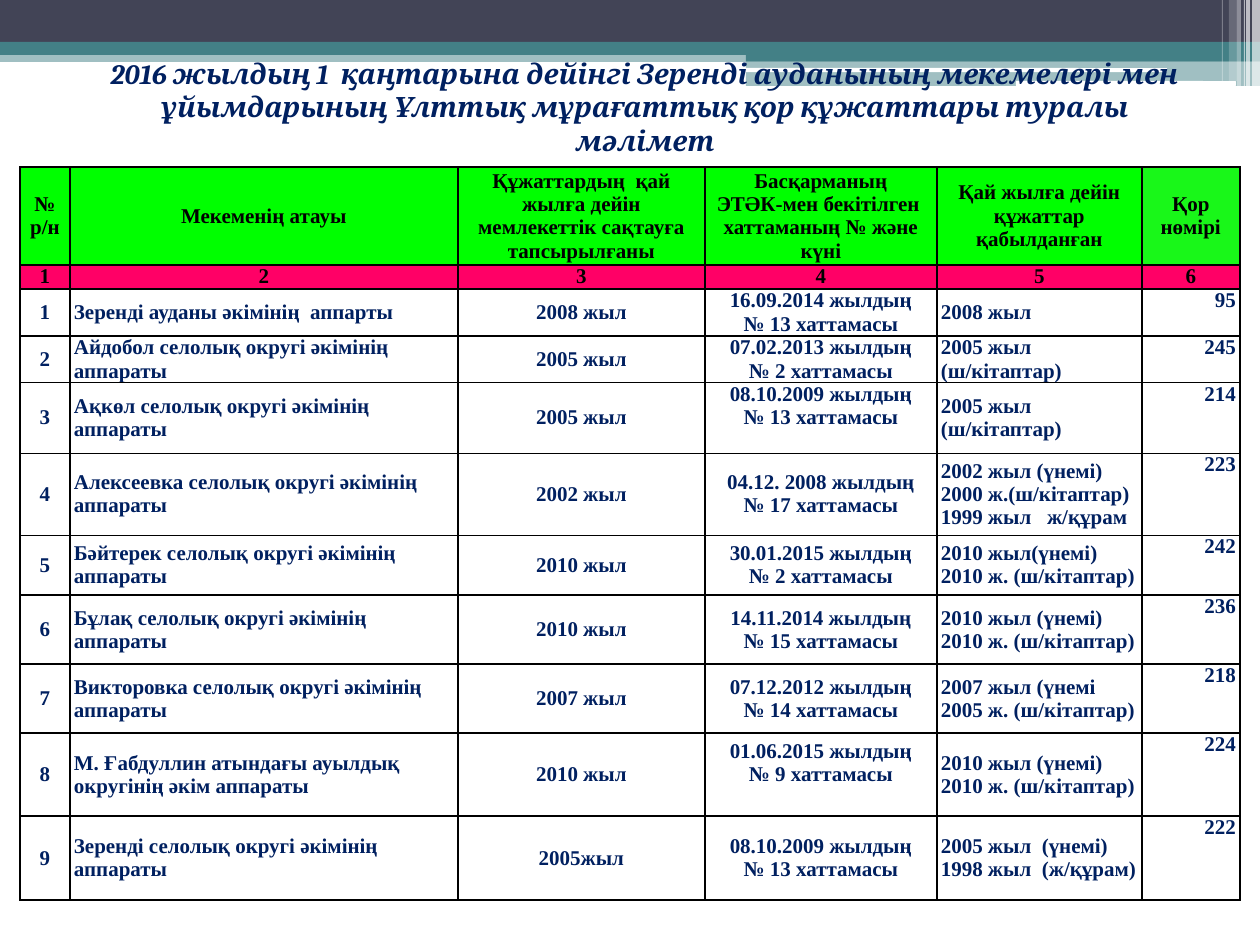
from lxml import etree
from pptx import Presentation
from pptx import util as u
from pptx.dml.color import RGBColor
from pptx.enum import shapes, text
from pptx.oxml import ns

PX = u.Inches(1) / 126
SLATE = RGBColor(0x42, 0x44, 0x56)
TEAL = RGBColor(0x43, 0x80, 0x86)
WHITE = RGBColor(0xFF, 0xFF, 0xFF)
BLACK = RGBColor(0, 0, 0)
NAVY = RGBColor(0x00, 0x20, 0x60)
GREEN = RGBColor(0x00, 0xFF, 0x00)
LIGHT_GREEN = RGBColor(0x19, 0xF7, 0x19)
PINK = RGBColor(0xFF, 0x00, 0x66)

RECT = shapes.MSO_SHAPE.RECTANGLE
ROUND = shapes.MSO_SHAPE.ROUNDED_RECTANGLE
LEFT, CENTER, RIGHT = text.PP_ALIGN.LEFT, text.PP_ALIGN.CENTER, text.PP_ALIGN.RIGHT
TOP, MIDDLE = text.MSO_ANCHOR.TOP, text.MSO_ANCHOR.MIDDLE

# left, top, width, height, outline, colour, opacity in percent
BARS = [
    (0, 50, 1260, 12, RECT, TEAL, 50),
    (0, 0, 1260, 42, RECT, SLATE, 100),
    (0, 42, 1260, 13, RECT, TEAL, 100),
    (746, 49, 514, 12, RECT, TEAL, 100),
    (746, 61, 514, 25, RECT, TEAL, 50),
    (745, 68, 422, 4, ROUND, WHITE, 100),
    (1016, 81, 220, 5, ROUND, WHITE, 100),
    (1252, 0, 8, 86, RECT, WHITE, 65),
    (1246, 0, 4, 86, RECT, WHITE, 65),
    (1244, 0, 1, 86, RECT, WHITE, 60),
    (1237, 0, 4, 86, RECT, WHITE, 40),
    (1229, 0, 8, 81, RECT, WHITE, 20),
    (1222, 0, 1, 81, RECT, WHITE, 30),
]

TITLE = ("2016 жылдың 1  қаңтарына дейінгі Зеренді ауданының мекемелері мен "
         "ұйымдарының Ұлттық мұрағаттық қор құжаттары туралы мәлімет")
HEADINGS = [
    "№\nр/н", "Мекеменің атауы",
    "Құжаттардың  қай жылға дейін мемлекеттік сақтауға тапсырылғаны",
    "Басқарманың\nЭТӘК-мен бекітілген  хаттаманың № және күні",
    "Қай жылға дейін құжаттар қабылданған", "Қор нөмірі",
]
# institution, year handed over, date and number of protocol, accepted up to, fund
RECORDS = [
    ("Зеренді ауданы әкімінің  аппарты", "2008 жыл",
     "16.09.2014", 13, "2008 жыл", "95"),
    ("Айдобол селолық округі әкімінің аппараты", "2005 жыл",
     "07.02.2013", 2, "2005 жыл (ш/кітаптар)", "245"),
    ("Ақкөл селолық округі әкімінің аппараты", "2005 жыл",
     "08.10.2009", 13, "2005 жыл (ш/кітаптар)", "214"),
    ("Алексеевка селолық округі әкімінің аппараты", "2002 жыл",
     "04.12. 2008", 17,
     "2002 жыл (үнемі)\n2000 ж.(ш/кітаптар)\n1999 жыл   ж/құрам", "223"),
    ("Бәйтерек селолық округі әкімінің аппараты", "2010 жыл",
     "30.01.2015", 2, "2010 жыл(үнемі)\n2010 ж. (ш/кітаптар)", "242"),
    ("Бұлақ селолық округі әкімінің аппараты", "2010 жыл",
     "14.11.2014", 15, "2010 жыл (үнемі)\n2010 ж. (ш/кітаптар)", "236"),
    ("Викторовка селолық округі әкімінің аппараты", "2007 жыл",
     "07.12.2012", 14, "2007 жыл (үнемі\n2005 ж. (ш/кітаптар)", "218"),
    ("М. Ғабдуллин атындағы ауылдық округінің әкім аппараты", "2010 жыл",
     "01.06.2015", 9, "2010 жыл (үнемі)\n2010 ж. (ш/кітаптар)", "224"),
    ("Зеренді селолық округі әкімінің аппараты", "2005жыл",
     "08.10.2009", 13, "2005 жыл  (үнемі)\n1998 жыл  (ж/құрам)", "222"),
]
COLUMN_WIDTHS = [50, 388, 247, 232, 205, 98]
ROW_HEIGHTS = [98, 24, 47, 46, 70, 82, 60, 69, 69, 83, 84]
BODY_ALIGNS = [CENTER, LEFT, CENTER, CENTER, LEFT, RIGHT]
PROTOCOL_COLUMN = 3
RAISED_PROTOCOLS = (3, 8)  # records whose protocol sits one line higher


def px(*values):
    return [u.Emu(round(value * PX)) for value in values]


def assign(target, **values):
    for name, value in values.items():
        setattr(target, name, value)


def set_font(font, color, **values):
    assign(font, **values)
    font.color.rgb = color


def add_bar(page, left, top, width, height, outline, color, opacity):
    bar = page.shapes.add_shape(outline, *px(left, top, width, height))
    bar.shadow.inherit = False
    bar.fill.solid()
    bar.fill.fore_color.rgb = color
    bar.line.fill.background()
    if opacity < 100:
        tint = bar.fill._xPr.find(".//" + ns.qn("a:srgbClr"))
        etree.SubElement(tint, ns.qn("a:alpha"), val=str(opacity * 1000))


def format_title(page):
    title = page.shapes.title
    page.shapes._spTree.append(title._element)  # in front of the bars
    assign(title, **dict(zip(("left", "top", "width", "height"),
                             px(78, 69, 1134, 129))))
    frame = title.text_frame
    assign(frame, text=TITLE, word_wrap=True, auto_size=text.MSO_AUTO_SIZE.NONE,
           vertical_anchor=text.MSO_ANCHOR.BOTTOM, margin_bottom=px(41)[0])
    para = frame.paragraphs[0]
    assign(para, alignment=CENTER, line_spacing=1.0)
    set_font(para.runs[0].font, NAVY, name="Cambria", size=u.Pt(16),
             bold=True, italic=True)


def add_borders(cell):
    """Draw a thin black line on all four sides; call before the fill is set."""
    properties = cell._tc.get_or_add_tcPr()
    for side in ("lnL", "lnR", "lnT", "lnB"):
        line = etree.SubElement(properties, ns.qn("a:" + side), w=str(u.Pt(1)))
        fill = etree.SubElement(line, ns.qn("a:solidFill"))
        etree.SubElement(fill, ns.qn("a:srgbClr"), val=str(BLACK))


def fill_cell(cell, words, color, align=CENTER, anchor=MIDDLE, fill=None, bottom=0):
    add_borders(cell)
    side, below = px(4, bottom)
    assign(cell, text=words, vertical_anchor=anchor, margin_left=side,
           margin_right=side, margin_top=0, margin_bottom=below)
    if fill is None:
        cell.fill.background()
    else:
        cell.fill.solid()
        cell.fill.fore_color.rgb = fill
    for para in cell.text_frame.paragraphs:
        para.alignment = align
        set_font(para.runs[0].font, color, name="Times New Roman",
                 size=u.Pt(12), bold=True)


def add_records(page):
    frame = page.shapes.add_table(
        len(ROW_HEIGHTS), len(COLUMN_WIDTHS),
        *px(20, 167, sum(COLUMN_WIDTHS), sum(ROW_HEIGHTS)))
    table = frame.table
    assign(table, first_row=False, horz_banding=False)
    for column, width in zip(table.columns, px(*COLUMN_WIDTHS)):
        column.width = width
    for row, height in zip(table.rows, px(*ROW_HEIGHTS)):
        row.height = height

    last = len(HEADINGS) - 1
    for index, heading in enumerate(HEADINGS):
        fill_cell(table.cell(0, index), heading, BLACK,
                  fill=LIGHT_GREEN if index == last else GREEN)
        fill_cell(table.cell(1, index), str(index + 1), BLACK, anchor=TOP, fill=PINK)

    for number, record in enumerate(RECORDS, 1):
        name, year, date, protocol, accepted, fund = record
        values = [str(number), name, year,
                  f"{date} жылдың\n№ {protocol} хаттамасы", accepted, fund]
        for index, (value, align) in enumerate(zip(values, BODY_ALIGNS)):
            raised = index == PROTOCOL_COLUMN and number in RAISED_PROTOCOLS
            fill_cell(table.cell(number + 1, index), value, NAVY, align,
                      TOP if index == last else MIDDLE, bottom=24 if raised else 0)


def main():
    deck = Presentation()
    assign(deck, slide_width=u.Inches(10), slide_height=u.Inches(7.5))
    page = deck.slides.add_slide(deck.slide_layouts.get_by_name("Title Only"))
    for bar in BARS:
        add_bar(page, *bar)
    format_title(page)
    add_records(page)
    deck.save("out.pptx")


if __name__ == "__main__":
    main()
